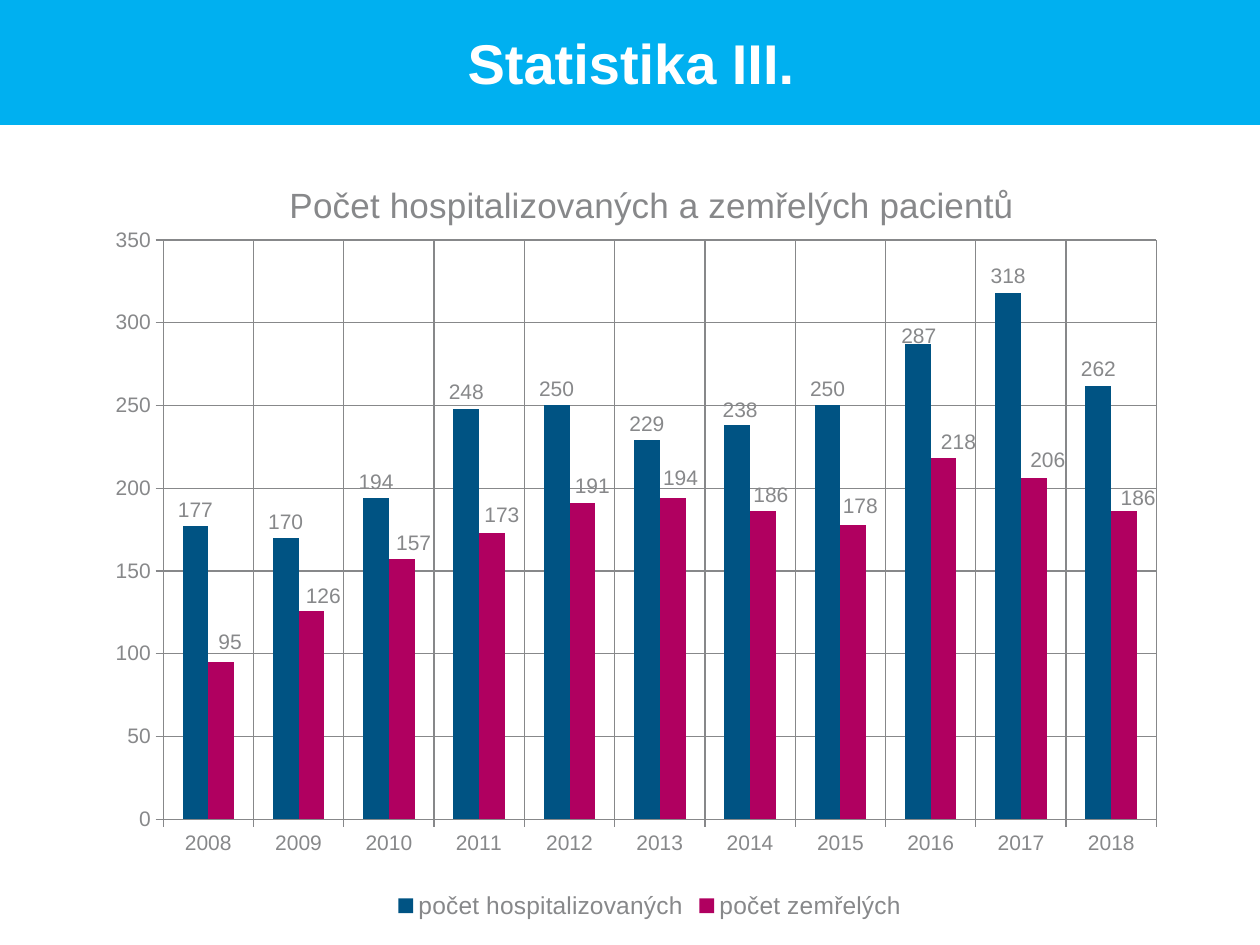
from dataclasses import dataclass

from lxml.etree import SubElement
from pptx import Presentation
from pptx.chart.data import CategoryChartData
from pptx.dml.color import RGBColor
from pptx.enum.chart import XL_CHART_TYPE as ChartType
from pptx.enum.chart import XL_LABEL_POSITION as LabelPosition
from pptx.enum.chart import XL_LEGEND_POSITION as LegendPosition
from pptx.enum.chart import XL_TICK_MARK as TickMark
from pptx.enum.text import MSO_ANCHOR as Anchor
from pptx.enum.text import PP_ALIGN as Align
from pptx.oxml.ns import qn
from pptx.util import Cm, Pt


@dataclass(frozen=True)
class Theme:
    font: str = "Arial"
    banner: str = "00B0F0"
    heading: str = "FFFFFF"
    muted: str = "87888A"
    hospitalised: str = "005383"
    deceased: str = "B00060"
    heading_size: int = 32
    chart_title_size: int = 20
    legend_size: int = 14
    label_size: int = 12
    line_width: float = 0.75


def apply(target, values):
    for attribute, value in values.items():
        setattr(target, attribute, value)


def set_layout(parent, position, values):
    for old in parent.findall(qn("c:layout")):
        parent.remove(old)
    layout = SubElement(parent, qn("c:layout"))
    parent.insert(position, layout)
    manual = SubElement(layout, qn("c:manualLayout"))
    for tag, value in values.items():
        SubElement(manual, qn(f"c:{tag}")).set("val", str(value))


class SlideBuilder:
    def __init__(self, slide, theme):
        self.slide = slide
        self.theme = theme

    def style_font(self, font, size, color=None, bold=False):
        apply(font, {"name": self.theme.font, "size": Pt(size), "bold": bold})
        font.color.rgb = RGBColor.from_string(color or self.theme.muted)

    def style_line(self, line):
        line.color.rgb = RGBColor.from_string(self.theme.muted)
        line.width = Pt(self.theme.line_width)

    def heading(self, text, box):
        banner = self.slide.shapes.title
        apply(banner, box)
        banner.fill.solid()
        banner.fill.fore_color.rgb = RGBColor.from_string(self.theme.banner)
        banner.text_frame.text = text
        banner.text_frame.vertical_anchor = Anchor.MIDDLE
        paragraph = banner.text_frame.paragraphs[0]
        paragraph.alignment = Align.CENTER
        self.style_font(paragraph.runs[0].font, self.theme.heading_size,
                        self.theme.heading, True)

    def column_chart(self, title, years, counts, box):
        data = CategoryChartData()
        data.categories = years
        for name, values, _, _ in counts:
            data.add_series(name, values)
        frame = self.slide.shapes.add_chart(
            ChartType.COLUMN_CLUSTERED, box["left"], box["top"],
            box["width"], box["height"], data)
        chart = frame.chart
        self.style_font(chart.font, self.theme.label_size)
        self.chart_title(chart, title)
        self.legend(chart)
        for axis in (chart.category_axis, chart.value_axis):
            self.axis(axis)
        apply(chart.value_axis, {"minimum_scale": 0, "maximum_scale": 350,
                                 "major_unit": 50})
        plot = chart.plots[0]
        apply(plot, {"gap_width": 150, "overlap": 0, "vary_by_categories": False})
        for series, (_, _, color, shifts) in zip(plot.series, counts):
            self.columns(series, color, shifts, box)
        plot_area = chart.element.find(f".//{qn('c:plotArea')}")
        set_layout(plot_area, 0, {
            "layoutTarget": "inner", "xMode": "edge", "yMode": "edge",
            "x": 0.062, "y": 0.122, "w": 0.894, "h": 0.743})

    def chart_title(self, chart, text):
        title = chart.chart_title
        title.text_frame.text = text
        self.style_font(title.text_frame.paragraphs[0].runs[0].font,
                        self.theme.chart_title_size)
        set_layout(chart.element.find(f".//{qn('c:title')}"), 1,
                   {"xMode": "edge", "yMode": "edge", "x": 0.17, "y": 0.04})

    def legend(self, chart):
        chart.has_legend = True
        apply(chart.legend, {"position": LegendPosition.BOTTOM,
                             "include_in_layout": False})
        self.style_font(chart.legend.font, self.theme.legend_size)

    def axis(self, axis):
        apply(axis, {"has_major_gridlines": True,
                     "major_tick_mark": TickMark.OUTSIDE,
                     "minor_tick_mark": TickMark.NONE})
        self.style_line(axis.format.line)
        self.style_line(axis.major_gridlines.format.line)
        self.style_font(axis.tick_labels.font, self.theme.label_size)

    def columns(self, series, color, shifts, box):
        series.format.fill.solid()
        series.format.fill.fore_color.rgb = RGBColor.from_string(color)
        labels = series.data_labels
        apply(labels, {"show_value": True, "position": LabelPosition.OUTSIDE_END})
        self.style_font(labels.font, self.theme.label_size)
        for index, (right, down) in shifts.items():
            label = series.points[index].data_label
            self.style_font(label.font, self.theme.label_size)
            label.position = LabelPosition.OUTSIDE_END
            set_layout(label._dLbl, 1, {
                "x": round(Cm(right) / box["width"], 4),
                "y": round(Cm(down) / box["height"], 4)})


def main():
    theme = Theme()
    deck = Presentation()
    apply(deck, {"slide_width": Cm(25.4), "slide_height": Cm(19.05)})
    builder = SlideBuilder(deck.slides.add_slide(deck.slide_layouts[5]), theme)
    builder.heading("Statistika III.", {
        "left": Cm(-0.05), "top": Cm(0), "width": Cm(25.55), "height": Cm(2.52)})

    years = [str(year) for year in range(2008, 2019)]
    hospitalised = (177, 170, 194, 248, 250, 229, 238, 250, 287, 318, 262)
    deceased = (95, 126, 157, 173, 191, 194, 186, 178, 218, 206, 186)
    hospitalised_shifts = {6: (0.06, 0.02), 8: (0.02, 0.16)}
    deceased_shifts = dict(enumerate((
        (0.18, -0.08), (0.24, 0.04), (0.24, 0), (0.2, -0.04),
        (0.2, -0.02), (0.16, -0.08), (0.16, 0), (0.14, -0.04),
        (0.3, 0), (0.28, -0.04), (0.28, 0.06))))
    builder.column_chart(
        "Počet hospitalizovaných a zemřelých pacientů", years,
        (("počet hospitalizovaných", hospitalised, theme.hospitalised,
          hospitalised_shifts),
         ("počet zemřelých", deceased, theme.deceased, deceased_shifts)),
        {"left": Cm(1.9), "top": Cm(2.92), "width": Cm(22.4), "height": Cm(15.72)})
    deck.save("out.pptx")


if __name__ == "__main__":
    main()
